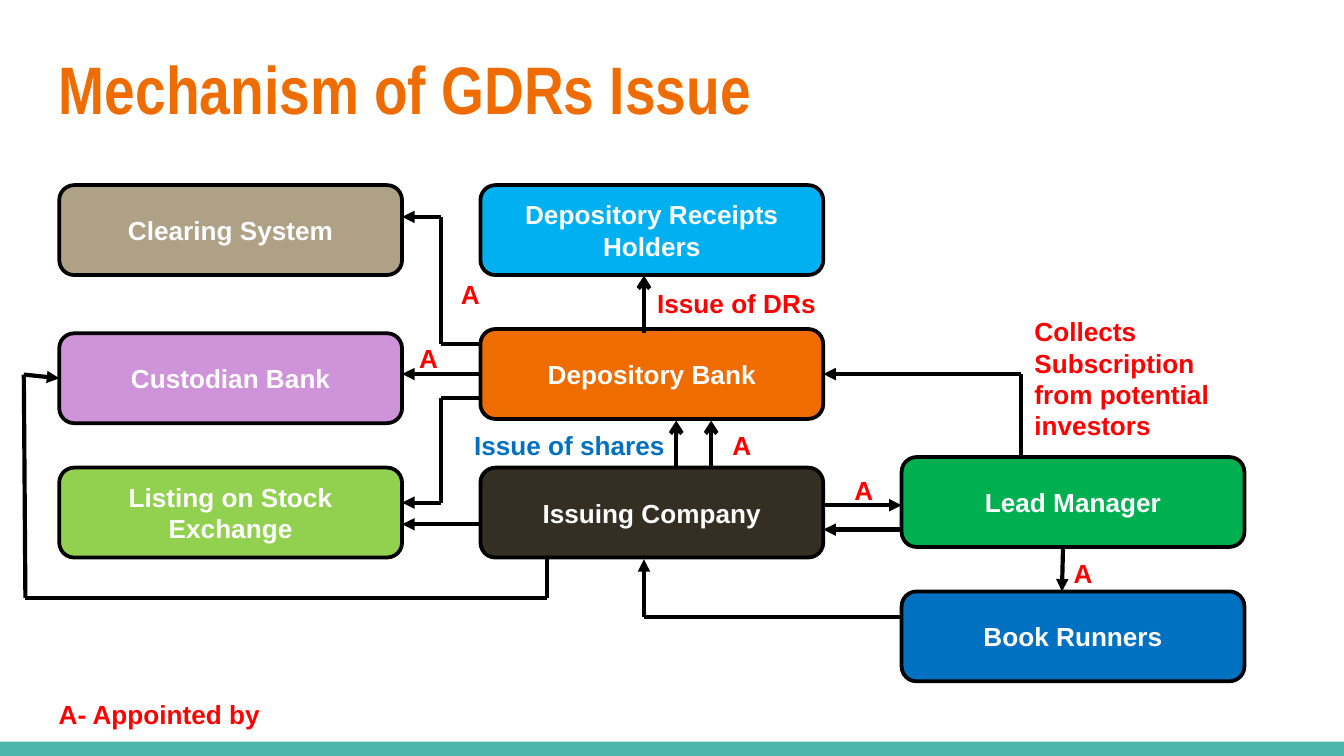
"""Builds a one-slide flow diagram of how GDRs are issued."""
from pptx import Presentation
from pptx import util as u
from pptx.dml.color import RGBColor
from pptx.enum import shapes, text
from pptx.oxml import ns, xmlchemy

BLACK = RGBColor(0x00, 0x00, 0x00)
WHITE = RGBColor(0xFF, 0xFF, 0xFF)
RED = RGBColor(0xFF, 0x00, 0x00)
ORANGE = RGBColor(0xEF, 0x6C, 0x00)
TEAL = RGBColor(0x4D, 0xB6, 0xAC)
DARK = RGBColor(0x34, 0x2E, 0x23)
TAUPE = RGBColor(0xAF, 0xA1, 0x86)
BLUE = RGBColor(0x00, 0x70, 0xC0)
GREEN = RGBColor(0x00, 0xB0, 0x50)
LILAC = RGBColor(0xCE, 0x93, 0xD8)
LIME = RGBColor(0x92, 0xD0, 0x50)
SKY = RGBColor(0x00, 0xB0, 0xF0)


def write(frame, wording, color, size=14, face="Arial"):
    frame.word_wrap = True
    paragraph = frame.paragraphs[0]
    paragraph.text = wording
    paragraph.font.size = u.Pt(size)
    paragraph.font.name = face
    paragraph.font.bold = True
    paragraph.font.color.rgb = color
    return paragraph


def draw_line(start, end, head=None):
    line = slide.shapes.add_connector(
        shapes.MSO_CONNECTOR.STRAIGHT, *[u.Cm(value) for value in start + end])
    line.line.color.rgb = BLACK
    line.line.width = u.Pt(2.25)
    if head:
        tail = xmlchemy.OxmlElement("a:tailEnd")
        tail.set("type", head)
        line.line._get_or_add_ln().append(tail)
    line._element.find(ns.qn("p:spPr")).append(xmlchemy.OxmlElement("a:effectLst"))
    return line


deck = Presentation()
deck.slide_width, deck.slide_height = u.Cm(25.4), u.Cm(14.29)
slide = deck.slides.add_slide(deck.slide_layouts[5])

stripe = slide.shapes.add_shape(
    shapes.MSO_SHAPE.RECTANGLE, 0, u.Cm(14.02), deck.slide_width, u.Cm(0.27))
stripe.shadow.inherit = False
stripe.fill.solid()
stripe.fill.fore_color.rgb = TEAL
stripe.line.fill.background()

heading = slide.shapes.title
heading.left, heading.top = u.Cm(0.86), u.Cm(0.53)
heading.width, heading.height = u.Cm(23.67), u.Cm(1.63)
heading.text_frame.auto_size = text.MSO_AUTO_SIZE.NONE
heading.text_frame.vertical_anchor = text.MSO_ANCHOR.TOP
heading.text_frame.margin_top = u.Cm(0.36)
write(heading.text_frame, "Mechanism of GDRs Issue", ORANGE, 36,
      "Arial Narrow").alignment = text.PP_ALIGN.LEFT

LEFT, MIDDLE, RIGHT = 1.12, 9.08, 17.04
PARTY_WIDTH, PARTY_HEIGHT = 6.48, 1.7
LEFT_EDGE, MIDDLE_EDGE = LEFT + PARTY_WIDTH, MIDDLE + PARTY_WIDTH
parties = {}
for name, left, top, color in [
    ("Depository Bank", MIDDLE, 6.22, ORANGE),
    ("Issuing Company", MIDDLE, 8.84, DARK),
    ("Clearing System", LEFT, 3.5, TAUPE),
    ("Book Runners", RIGHT, 11.18, BLUE),
    ("Lead Manager", RIGHT, 8.64, GREEN),
    ("Custodian Bank", LEFT, 6.3, LILAC),
    ("Listing on Stock Exchange", LEFT, 8.84, LIME),
    ("Depository Receipts Holders", MIDDLE, 3.5, SKY),
]:
    party = slide.shapes.add_shape(
        shapes.MSO_SHAPE.ROUNDED_RECTANGLE, u.Cm(left), u.Cm(top),
        u.Cm(PARTY_WIDTH), u.Cm(PARTY_HEIGHT))
    party.shadow.inherit = False
    party.fill.solid()
    party.fill.fore_color.rgb = color
    party.line.color.rgb = BLACK
    party.line.width = u.Pt(2)
    party.text_frame.vertical_anchor = text.MSO_ANCHOR.MIDDLE
    write(party.text_frame, name, WHITE).alignment = text.PP_ALIGN.CENTER
    parties[name] = party

for head, stops in [
    ("arrow", [(13.44, 8.84), (13.44, 7.95)]),
    ("arrow", [(12.78, 8.84), (12.78, 7.95)]),
    ("arrow", [(12.17, 6.3), (12.17, 5.21)]),
    ("triangle", [(MIDDLE_EDGE, 9.55), (RIGHT, 9.55)]),
    ("triangle", [(RIGHT, 10.01), (MIDDLE_EDGE, 10.01)]),
    ("triangle", [(20.09, 10.34), (20.07, 11.18)]),
    ("triangle", [(RIGHT, 11.66), (12.17, 11.66), (12.17, 10.57)]),
    ("triangle", [(MIDDLE, 9.91), (LEFT_EDGE, 9.91)]),
    ("triangle", [(MIDDLE, 7.52), (8.33, 7.52), (8.33, 9.5), (LEFT_EDGE, 9.5)]),
    ("triangle", [(MIDDLE, 6.5), (8.33, 6.5), (8.33, 4.1), (LEFT_EDGE, 4.1)]),
]:
    for start, end in zip(stops, stops[1:]):
        draw_line(start, end, head if end == stops[-1] else None)

custody = draw_line((MIDDLE, 7.07), (LEFT_EDGE, 7.07), "triangle")
custody.begin_connect(parties["Depository Bank"], 1)

draw_line((19.3, 8.64), (19.3, 7.07))
subscription = draw_line((19.3, 7.07), (MIDDLE_EDGE, 7.07), "triangle")
subscription.end_connect(parties["Depository Bank"], 3)

deposit_stops = [(10.34, 10.57), (10.34, 11.3), (0.48, 11.3), (0.45, 7.08)]
for start, end in zip(deposit_stops, deposit_stops[1:]):
    draw_line(start, end)
deposit = draw_line(deposit_stops[-1], (LEFT, 7.15), "triangle")
deposit.end_connect(parties["Custodian Bank"], 1)

for wording, left, top, width, height, color in [
    ("A", 15.9, 8.84, 0.86, 0.86, RED),
    ("A", 13.59, 8.0, 0.86, 0.86, RED),
    ("A", 20.04, 10.41, 0.86, 0.86, RED),
    ("A", 7.67, 6.35, 0.86, 0.86, RED),
    ("A", 8.46, 5.13, 0.86, 0.86, RED),
    ("Collects Subscription from potential investors", 19.3, 5.84, 4.72, 2.64, RED),
    ("Issue of shares", 8.71, 8.0, 4.19, 0.86, BLUE),
    ("Issue of DRs", 12.17, 5.31, 3.63, 0.86, RED),
    ("A- Appointed by", 0.86, 13.08, 4.88, 0.86, RED),
]:
    label = slide.shapes.add_textbox(u.Cm(left), u.Cm(top), u.Cm(width), u.Cm(height))
    write(label.text_frame, wording, color)

deck.save("out.pptx")
